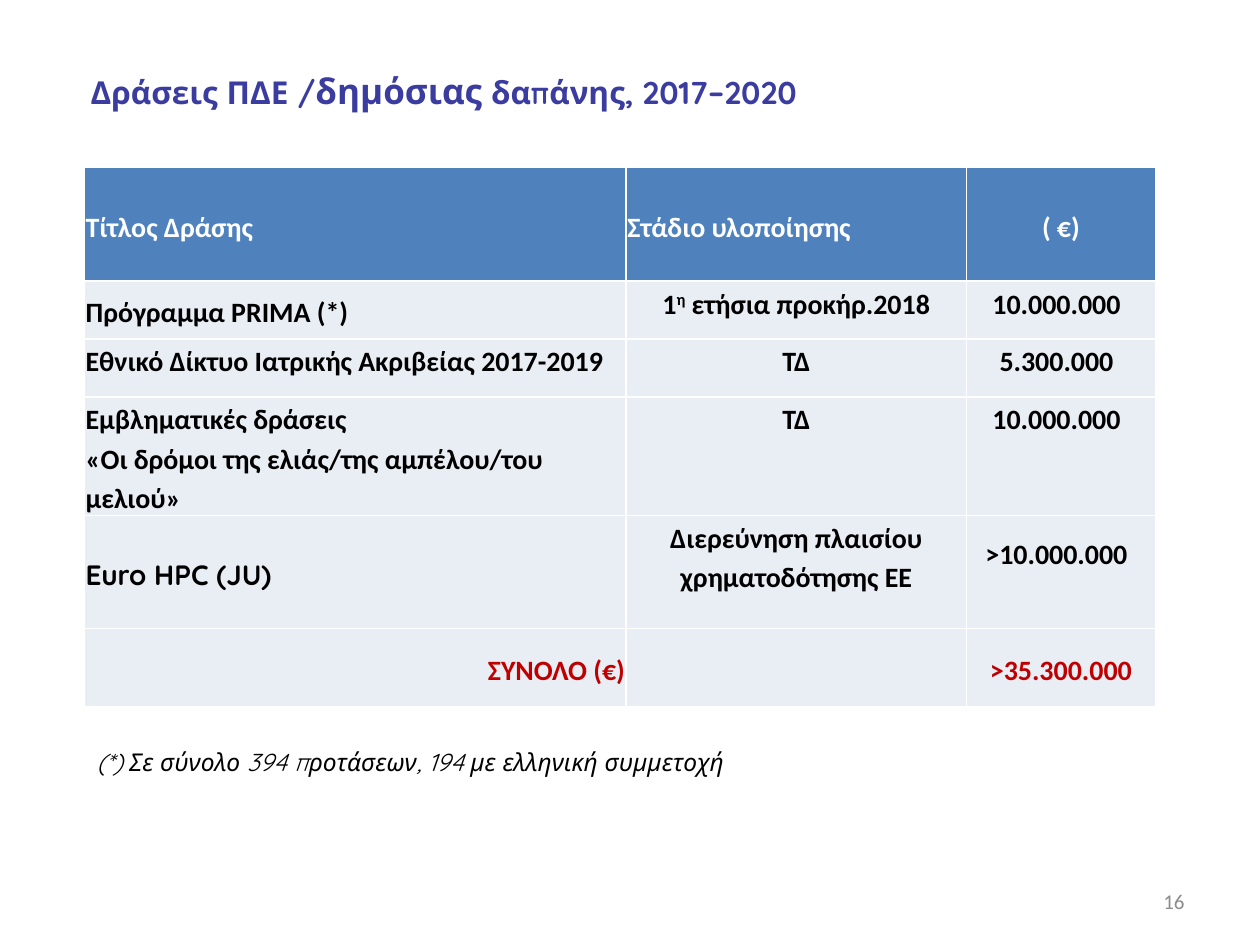
from dataclasses import dataclass

from pptx import Presentation
from pptx.dml.color import RGBColor
from pptx.enum.text import MSO_ANCHOR as ANCHOR, MSO_AUTO_SIZE as FIT, PP_ALIGN as ALIGN
from pptx.util import Inches, Pt


@dataclass(frozen=True)
class Theme:
    body: str = "Calibri"
    display: str = "Quicksand"
    title: str = "3A3CA0"
    header: str = "4F81BD"
    band: str = "E9EDF4"
    light: str = "FFFFFF"
    dark: str = "000000"
    total: str = "C00000"
    muted: str = "8C8C8C"
    title_size: int = 18
    title_accent_size: int = 20
    table_size: int = 16
    note_size: int = 14
    number_size: int = 12


@dataclass
class Cell:
    text: str
    align: ALIGN = ALIGN.LEFT
    anchor: ANCHOR = ANCHOR.TOP
    font: str = Theme.body
    color: str = Theme.dark
    top: float = 0.01
    right: float = 0.01


class SlideBuilder:
    def __init__(self, slide, theme):
        self.s = slide
        self.theme = theme

    def style(self, r, size, color, font=None, bold=False, italic=False):
        f = r.font
        f.name = font or self.theme.body
        f.size, f.bold, f.italic = Pt(size), bold, italic
        f.color.rgb = RGBColor.from_string(color)

    def title(self, parts, left, top, width, height):
        """Fill the title placeholder from (text, size) parts."""
        sp = self.s.shapes.title
        sp.left, sp.top, sp.width, sp.height = map(Inches, (left, top, width, height))
        tf = sp.text_frame
        tf.auto_size, tf.vertical_anchor, tf.word_wrap = FIT.NONE, ANCHOR.TOP, True
        p = tf.paragraphs[0]
        p.alignment = ALIGN.LEFT
        for text, size in parts:
            r = p.add_run()
            r.text = text
            self.style(r, size, self.theme.title, self.theme.display, bold=True)

    def text(self, text, left, top, width, height, size, color, font=None,
             italic=False, align=ALIGN.LEFT, anchor=ANCHOR.TOP, spacing=1.0):
        sp = self.s.shapes.add_textbox(*map(Inches, (left, top, width, height)))
        tf = sp.text_frame
        tf.word_wrap, tf.vertical_anchor = True, anchor
        tf.text = text
        p = tf.paragraphs[0]
        p.alignment, p.line_spacing = align, spacing
        self.style(p.runs[0], size, color, font, italic=italic)

    def cell(self, cell, content, fill):
        cell.fill.solid()
        cell.fill.fore_color.rgb = RGBColor.from_string(fill)
        cell.margin_left, cell.margin_bottom = Inches(0.01), 0
        cell.margin_top, cell.margin_right = Inches(content.top), Inches(content.right)
        cell.vertical_anchor = content.anchor
        cell.text_frame.text = content.text
        for p in cell.text_frame.paragraphs:
            p.alignment, p.line_spacing = content.align, 1.15
            for r in p.runs:
                self.style(r, self.theme.table_size, content.color, content.font, bold=True)

    def table(self, rows, left, top, widths, heights):
        box = map(Inches, (left, top, sum(widths), sum(heights)))
        tbl = self.s.shapes.add_table(len(rows), len(widths), *box).table
        tbl.horz_banding = False
        for col, width in zip(tbl.columns, widths):
            col.width = Inches(width)
        for i, (row, height) in enumerate(zip(rows, heights)):
            tbl.rows[i].height = Inches(height)
            fill = self.theme.band if i else self.theme.header
            for j, content in enumerate(row):
                self.cell(tbl.cell(i, j), content, fill)
        return tbl

    def ordinal(self, cell, number, suffix, rest):
        """Write a number with a raised suffix, in the style of the cell's text."""
        p = cell.text_frame.paragraphs[0]
        p.runs[0].text = number
        for text in (suffix, rest):
            r = p.add_run()
            r.text = text
            self.style(r, self.theme.table_size, self.theme.dark, bold=True)
        p.runs[1].font._element.set("baseline", "30000")


def head(text, align=ALIGN.LEFT):
    return Cell(text, align, ANCHOR.MIDDLE, color=Theme.light)


def stage(text):
    return Cell(text, ALIGN.CENTER)


def amount(text, **options):
    return Cell(text, ALIGN.CENTER, **{"right": 0.08, **options})


def main():
    prs = Presentation()
    prs.slide_width, prs.slide_height = Inches(10), Inches(7.5)
    theme = Theme()
    b = SlideBuilder(prs.slides.add_slide(prs.slide_layouts[5]), theme)

    b.text("16", 7.17, 6.95, 2.33, 0.4, theme.number_size, theme.muted,
           align=ALIGN.RIGHT, anchor=ANCHOR.MIDDLE)

    total = {"anchor": ANCHOR.MIDDLE, "color": theme.total}
    rows = [
        [head("Τίτλος Δράσης"), head("Στάδιο υλοποίησης"), head("( €)", ALIGN.CENTER)],
        [Cell("Πρόγραμμα PRIMA (*)", anchor=ANCHOR.MIDDLE), stage("1"), amount("10.000.000")],
        [Cell("Εθνικό Δίκτυο Ιατρικής Ακριβείας 2017-2019"), stage("ΤΔ"), amount("5.300.000")],
        [Cell("Εμβληματικές δράσεις\n«Οι δρόμοι της ελιάς/της αμπέλου/του μελιού»"),
         stage("ΤΔ"), amount("10.000.000")],
        [Cell("Euro HPC (JU)", anchor=ANCHOR.MIDDLE, font=theme.display),
         stage("Διερεύνηση πλαισίου χρηματοδότησης ΕΕ"), amount(">10.000.000", top=0.14)],
        [Cell("ΣΥΝΟΛΟ (€)", ALIGN.RIGHT, **total), stage(""),
         amount(">35.300.000", right=0.01, **total)],
    ]
    tbl = b.table(rows, 0.67, 1.33, [4.3, 2.7, 1.5], [0.9, 0.46, 0.46, 0.94, 0.9, 0.62])
    b.ordinal(tbl.cell(1, 1), "1", "η", " ετήσια προκήρ.2018")

    b.title([("Δράσεις ΠΔΕ /", theme.title_size),
             ("δημόσιας", theme.title_accent_size),
             (" δαπάνης, 2017–2020", theme.title_size)], 0.62, 0.5, 7.04, 0.44)
    b.text("(*) Σε σύνολο 394 προτάσεων, 194 με ελληνική συμμετοχή",
           0.67, 5.65, 7.42, 0.57, theme.note_size, theme.dark, theme.display,
           italic=True, spacing=2.0)

    prs.save("out.pptx")


if __name__ == "__main__":
    main()
